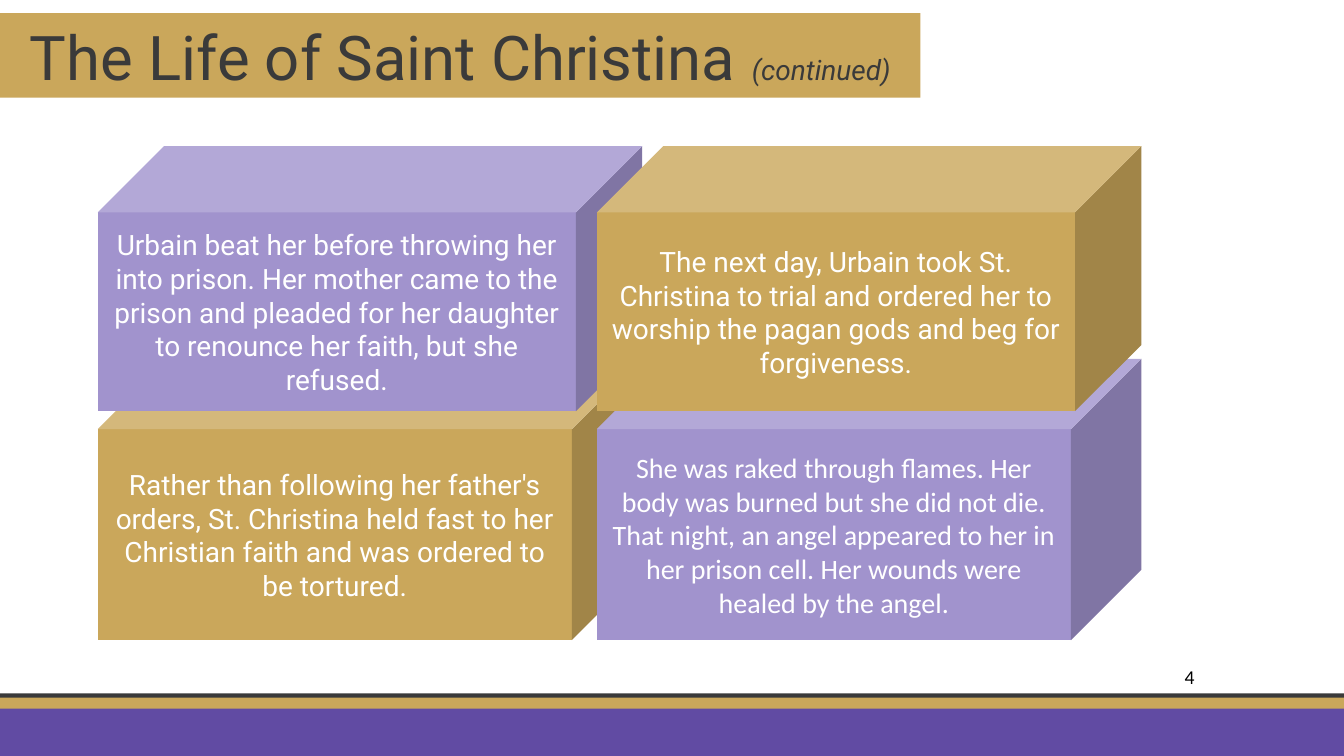
"""Build the slide on the life of Saint Christina with four cubes."""
import pptx
import pptx.util
from pptx.dml.color import RGBColor
from pptx.enum.shapes import MSO_SHAPE
from pptx.enum.text import MSO_ANCHOR, MSO_AUTO_SIZE, PP_ALIGN

In = pptx.util.Inches
DARK, GOLD, PURPLE, LILAC, WHITE = "3A3A3A", "CAA75B", "614BA3", "A193CD", "FFFFFF"
W, H = 13.33, 7.5


def paint(target, color):
    target.fill.solid()
    target.fill.fore_color.rgb = RGBColor.from_string(color)


def style(r, font, size, color):
    r.font.name = font
    r.font.size = pptx.util.Pt(size)
    paint(r.font, color)


prs = pptx.Presentation()
prs.slide_width, prs.slide_height = In(W), In(H)
s = prs.slides.add_slide(prs.slide_layouts[5])

for top, height, color in [(6.88, 0.06, DARK), (6.92, 0.12, GOLD), (7.03, 0.47, PURPLE)]:
    sp = s.shapes.add_shape(MSO_SHAPE.RECTANGLE, 0, In(top), In(W), In(height))
    sp.shadow.inherit = False
    paint(sp, color)
    sp.line.fill.background()

title = s.shapes.title
title.left, title.top, title.width, title.height = In(0), In(0.13), In(9.13), In(0.84)
paint(title, GOLD)
tf = title.text_frame
tf.auto_size = MSO_AUTO_SIZE.NONE
tf.word_wrap = False
tf.vertical_anchor = MSO_ANCHOR.MIDDLE
p = tf.paragraphs[0]
p.alignment = PP_ALIGN.CENTER
for text, size in [("The Life of Saint Christina ", 44), ("(continued)", 20)]:
    r = p.add_run()
    r.text = text
    style(r, "Roboto", size, DARK)
r.font.italic = True

left, pitch, width = 0.97, 4.95, 5.4
rows = [(1.45, 2.63), (3.56, 2.79)]
cubes = [
    (0, 1, GOLD, "Roboto", "Rather than following her father's orders, St. Christina held fast "
     "to her Christian faith and was ordered to be tortured."),
    (0, 0, LILAC, "Roboto", "Urbain beat her before throwing her into prison. Her mother came to "
     "the prison and pleaded for her daughter to renounce her faith, but she refused."),
    (1, 1, LILAC, "Calibri", "She was raked through flames. Her body was burned but she did not die. "
     "That night, an angel appeared to her in her prison cell. Her wounds were healed by the angel."),
    (1, 0, GOLD, "Roboto", "The next day, Urbain took St. Christina to trial and ordered her to "
     "worship the pagan gods and beg for forgiveness."),
]
for col, row, color, font, text in cubes:
    top, height = rows[row]
    sp = s.shapes.add_shape(MSO_SHAPE.CUBE, In(left + col * pitch), In(top), In(width), In(height))
    sp.shadow.inherit = False
    paint(sp, color)
    sp.line.fill.background()
    tf = sp.text_frame
    tf.word_wrap = True
    tf.vertical_anchor = MSO_ANCHOR.MIDDLE
    p = tf.paragraphs[0]
    p.text = text
    p.alignment = PP_ALIGN.CENTER
    style(p.runs[0], font, 20, WHITE)

tf = s.shapes.add_textbox(In(11.65), In(6.55), In(0.83), In(0.34)).text_frame
tf.word_wrap = True
tf.text = "4"
style(tf.paragraphs[0].runs[0], "Calibri", 14, "000000")

prs.save("out.pptx")
